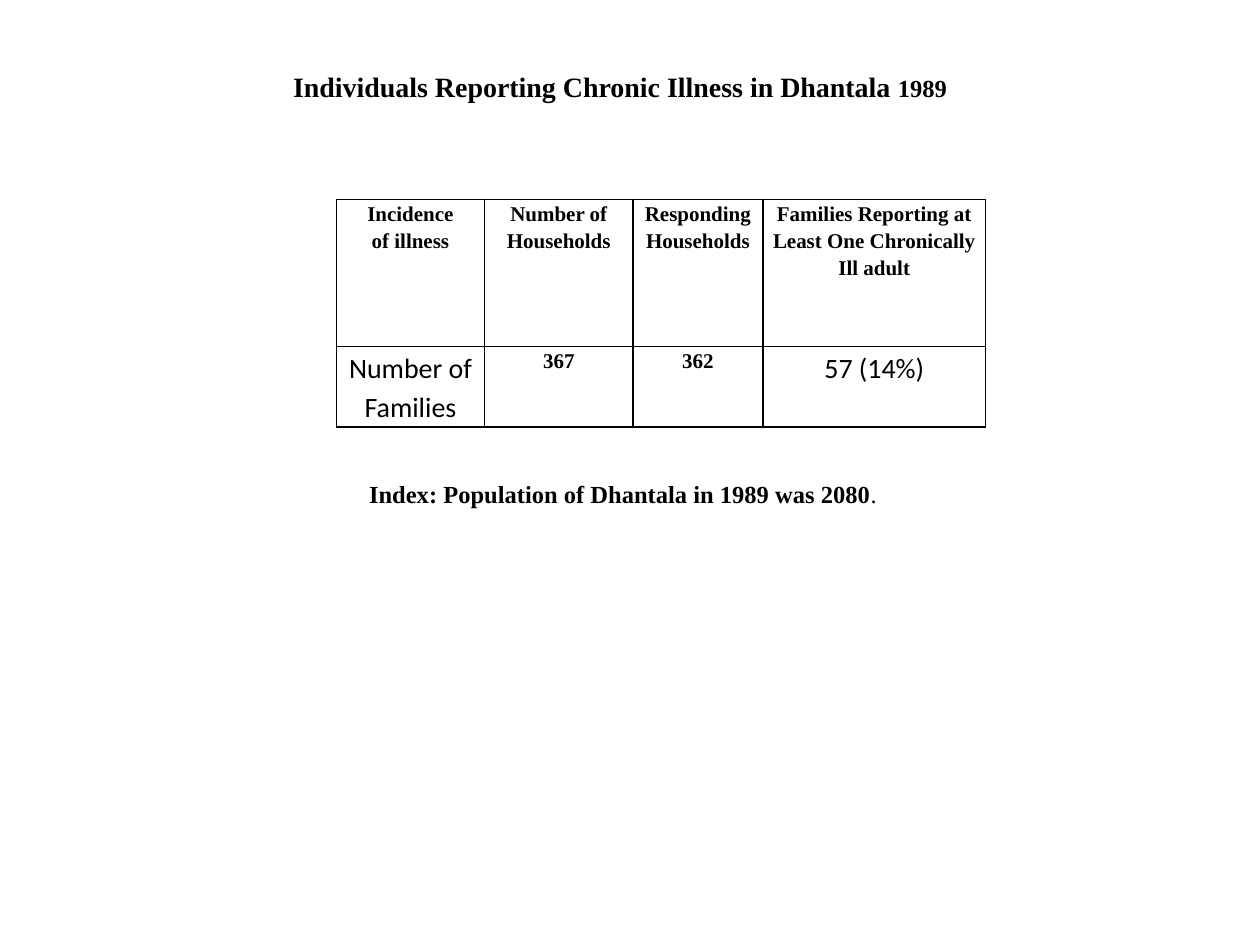
from lxml import etree
from pptx import Presentation
from pptx.dml.color import RGBColor
from pptx.enum.text import MSO_ANCHOR, MSO_AUTO_SIZE, PP_ALIGN as Align
from pptx.oxml import parse_xml
from pptx.util import Cm, Pt

BLACK = "000000"
SERIF, SANS = "Times New Roman", "Calibri"
DRAWING = "http://schemas.openxmlformats.org/drawingml/2006/main"


def color(value):
    return RGBColor.from_string(value)


def format_run(run, size, name=SERIF, bold=True):
    run.font.size = Pt(size)
    run.font.name = name
    run.font.bold = bold
    run.font.color.rgb = color(BLACK)


presentation = Presentation()
presentation.slide_width, presentation.slide_height = Cm(25.4), Cm(19.05)
slide = presentation.slides.add_slide(presentation.slide_layouts[6])

# Title above the table and index line below it
lines = [
    ((2.34, 1.27, 20.32, 0.94), Align.CENTER,
     [("Individuals Reporting Chronic Illness in Dhantala ", 16, True), ("1989", 14, True)]),
    ((7.19, 9.53, 12.7, 0.86), Align.JUSTIFY,
     [("Index: Population of Dhantala in 1989 was 2080", 14, True), (".", 14, False)]),
]
for box, alignment, pieces in lines:
    text_frame = slide.shapes.add_textbox(*map(Cm, box)).text_frame
    text_frame.word_wrap = True
    text_frame.auto_size = MSO_AUTO_SIZE.SHAPE_TO_FIT_TEXT
    text_frame.vertical_anchor = MSO_ANCHOR.MIDDLE
    paragraph = text_frame.paragraphs[0]
    paragraph.alignment = alignment
    for text, size, bold in pieces:
        run = paragraph.add_run()
        run.text = text
        format_run(run, size, bold=bold)

# Table of households and illness
rows = [
    ["Incidence\nof illness", "Number of Households", "Responding Households",
     "Families Reporting at Least One Chronically Ill adult"],
    ["Number of Families", "367", "362", "57 (14%)"],
]
large_texts = {"Number of Families", "57 (14%)"}
column_widths = [2.99, 2.99, 2.62, 4.49]
row_heights = [2.97, 1.62]
table = slide.shapes.add_table(
    len(rows), len(column_widths), Cm(6.78), Cm(4.02),
    Cm(sum(column_widths)), Cm(sum(row_heights))).table
table.first_row = table.horz_banding = False
for column, width in zip(table.columns, column_widths):
    column.width = Cm(width)

for row, height, texts in zip(table.rows, row_heights, rows):
    row.height = Cm(height)
    for cell, text in zip(row.cells, texts):
        cell.margin_left = cell.margin_right = Cm(0.18)
        cell.margin_top = cell.margin_bottom = Cm(0)
        cell.text_frame.text = text
        for paragraph in cell.text_frame.paragraphs:
            paragraph.alignment = Align.CENTER
            paragraph.line_spacing = 1.15
            if text in large_texts:
                format_run(paragraph.runs[0], 16, SANS, False)
            else:
                format_run(paragraph.runs[0], 12)

        # Cell borders come before the fill in the cell properties
        cell.fill.background()
        properties = cell._tc.get_or_add_tcPr()
        for position, side in enumerate(("lnL", "lnR", "lnT", "lnB")):
            border = parse_xml(f'<a:{side} xmlns:a="{DRAWING}" w="{Pt(1)}"/>')
            fill = etree.SubElement(border, f"{{{DRAWING}}}solidFill")
            etree.SubElement(fill, f"{{{DRAWING}}}srgbClr", val=BLACK)
            properties.insert(position, border)

presentation.save("out.pptx")
